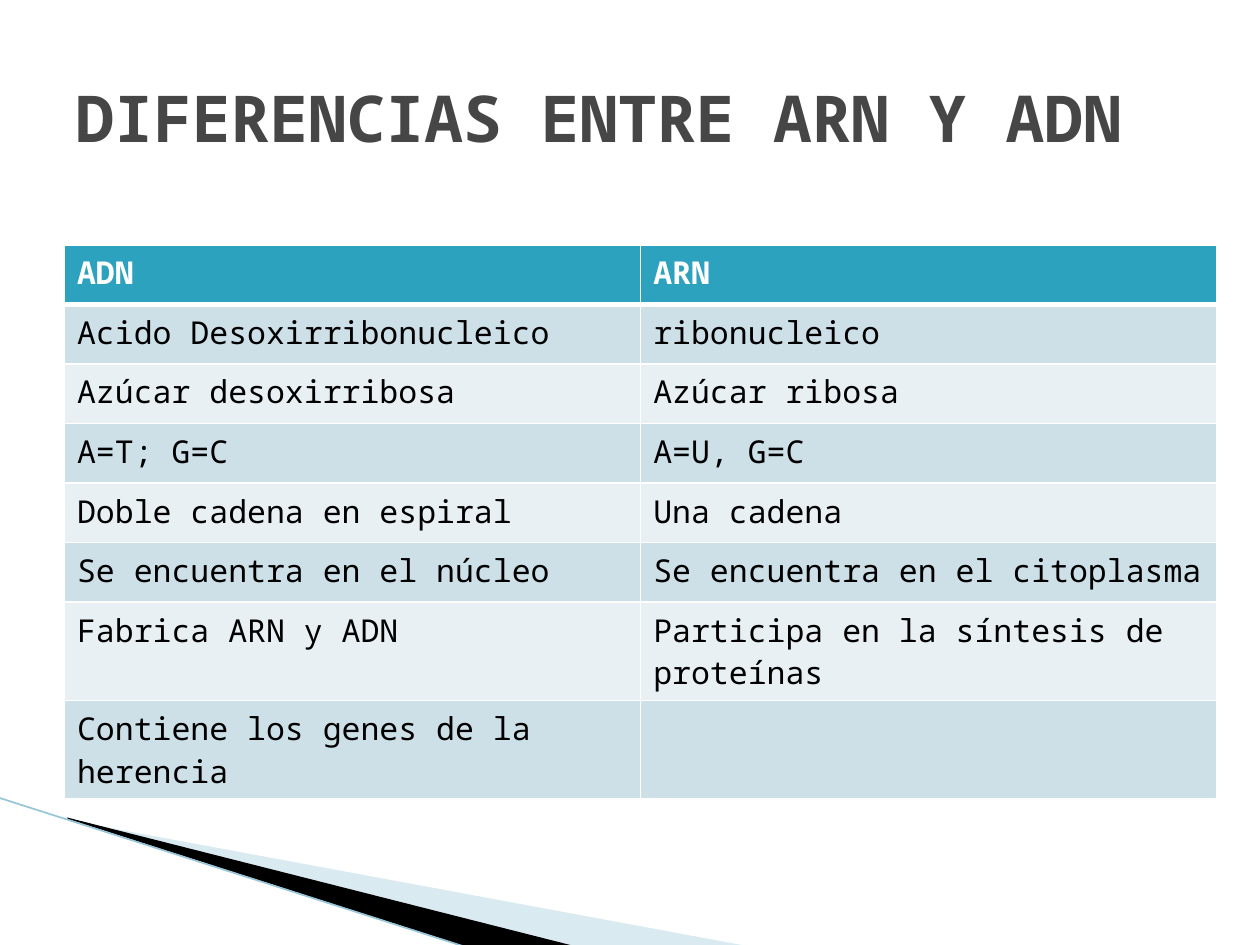
from lxml.etree import SubElement
from pptx import Presentation
from pptx.dml.color import RGBColor
from pptx.enum.shapes import MSO_CONNECTOR
from pptx.enum.text import MSO_ANCHOR, PP_ALIGN
from pptx.oxml.ns import qn
from pptx.util import Cm, Pt


def color(value):
    return RGBColor.from_string(value)


def set_font(font, hex_color, **values):
    font.color.rgb = color(hex_color)
    for name, value in {"name": "Noto Sans Mono", **values}.items():
        setattr(font, name, value)


deck = Presentation()
deck.slide_width, deck.slide_height = Cm(25.4), Cm(19.05)
page = deck.slides.add_slide(deck.slide_layouts[5])

# Corner wedges: outline in cm, fill, opacity in percent
wedges = [
    ([(1.4, 16.54), (15.11, 19.08), (11.58, 19.08), (1.4, 16.51)], "A0CBDC", 40),
    ([(1.35, 16.48), (11.61, 19.08), (9.45, 19.1), (1.37, 16.51)], "000000", 100),
]
for points, fill, opacity in wedges:
    start, *rest = [(Cm(x), Cm(y)) for x, y in points]
    builder = page.shapes.build_freeform(*start)
    builder.add_line_segments(rest, close=True)
    wedge = builder.convert_to_shape()
    wedge.shadow.inherit = False
    wedge.line.fill.background()
    wedge.fill.solid()
    wedge.fill.fore_color.rgb = color(fill)
    if opacity < 100:
        tint = wedge.fill._xPr.find(".//" + qn("a:srgbClr"))
        SubElement(tint, qn("a:alpha"), val=str(opacity * 1000))

# Corner edge line
edge = page.shapes.add_connector(
    MSO_CONNECTOR.STRAIGHT, Cm(-0.03), Cm(16.08), Cm(9.42), Cm(19.1))
edge.line.color.rgb = color("97C5D8")
edge.line.width = Pt(0.95)
SubElement(edge._element.spPr, qn("a:effectLst"))

# Title
title = page.shapes.title
placement = {"left": Cm(1.27), "top": Cm(0.76), "width": Cm(22.86), "height": Cm(3.18)}
for name, value in placement.items():
    setattr(title, name, value)
title.text_frame.text = "DIFERENCIAS ENTRE ARN Y ADN"
title.text_frame.word_wrap = True
title.text_frame.vertical_anchor = MSO_ANCHOR.MIDDLE
para = title.text_frame.paragraphs[0]
para.alignment = PP_ALIGN.LEFT
set_font(para.runs[0].font, "464646", size=Pt(36.9), bold=True)

# Comparison table
rows = [
    ("ADN", "ARN"),
    ("Acido Desoxirribonucleico", "ribonucleico"),
    ("Azúcar desoxirribosa", "Azúcar ribosa"),
    ("A=T; G=C", "A=U, G=C"),
    ("Doble cadena en espiral", "Una cadena"),
    ("Se encuentra en el núcleo", "Se encuentra en el citoplasma"),
    ("Fabrica ARN y ADN", "Participa en la síntesis de proteínas"),
    ("Contiene los genes de la herencia", ""),
]
table = page.shapes.add_table(
    len(rows), 2, Cm(1.3), Cm(4.94), Cm(23.23), Cm(1.2) * len(rows)).table
for row_index, texts in enumerate(rows):
    header = row_index == 0
    fill = "2DA2BF" if header else ("E8F0F4", "CDE0E8")[row_index % 2]
    for column_index, text in enumerate(texts):
        cell = table.cell(row_index, column_index)
        cell.text = text
        set_font(cell.text_frame.paragraphs[0].font, "FFFFFF" if header else "000000",
                 size=Pt(18), bold=header)

        # White borders go before the fill; the rule at the header is heavier
        properties = cell._tc.get_or_add_tcPr()
        for side in "LRTB":
            heavy = (side == "B" and row_index == 0) or (side == "T" and row_index == 1)
            border = SubElement(properties, qn(f"a:ln{side}"), w=str(Pt(3 if heavy else 1)))
            paint = SubElement(border, qn("a:solidFill"))
            SubElement(paint, qn("a:srgbClr"), val="FFFFFF")
        cell.fill.solid()
        cell.fill.fore_color.rgb = color(fill)

deck.save("out.pptx")
